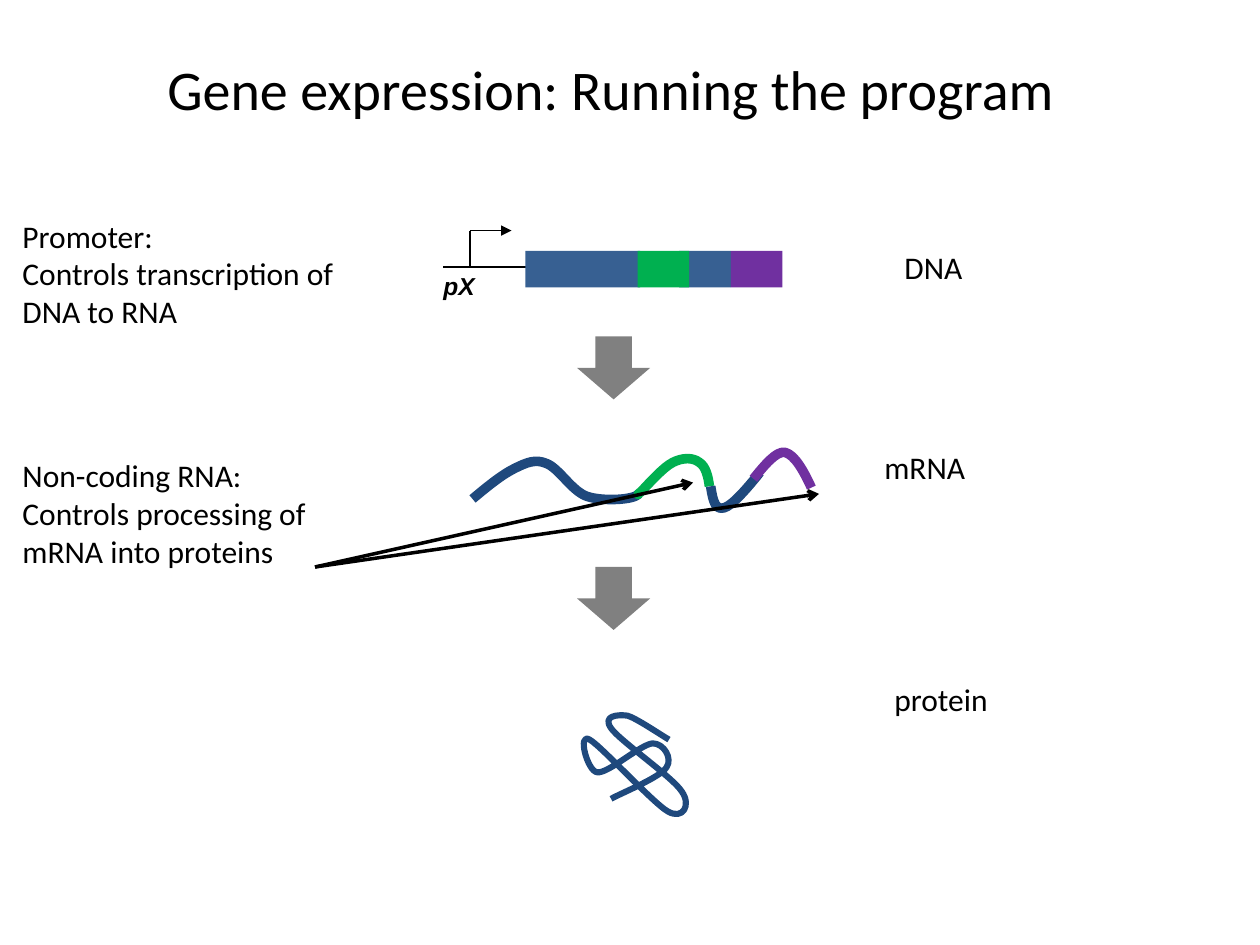
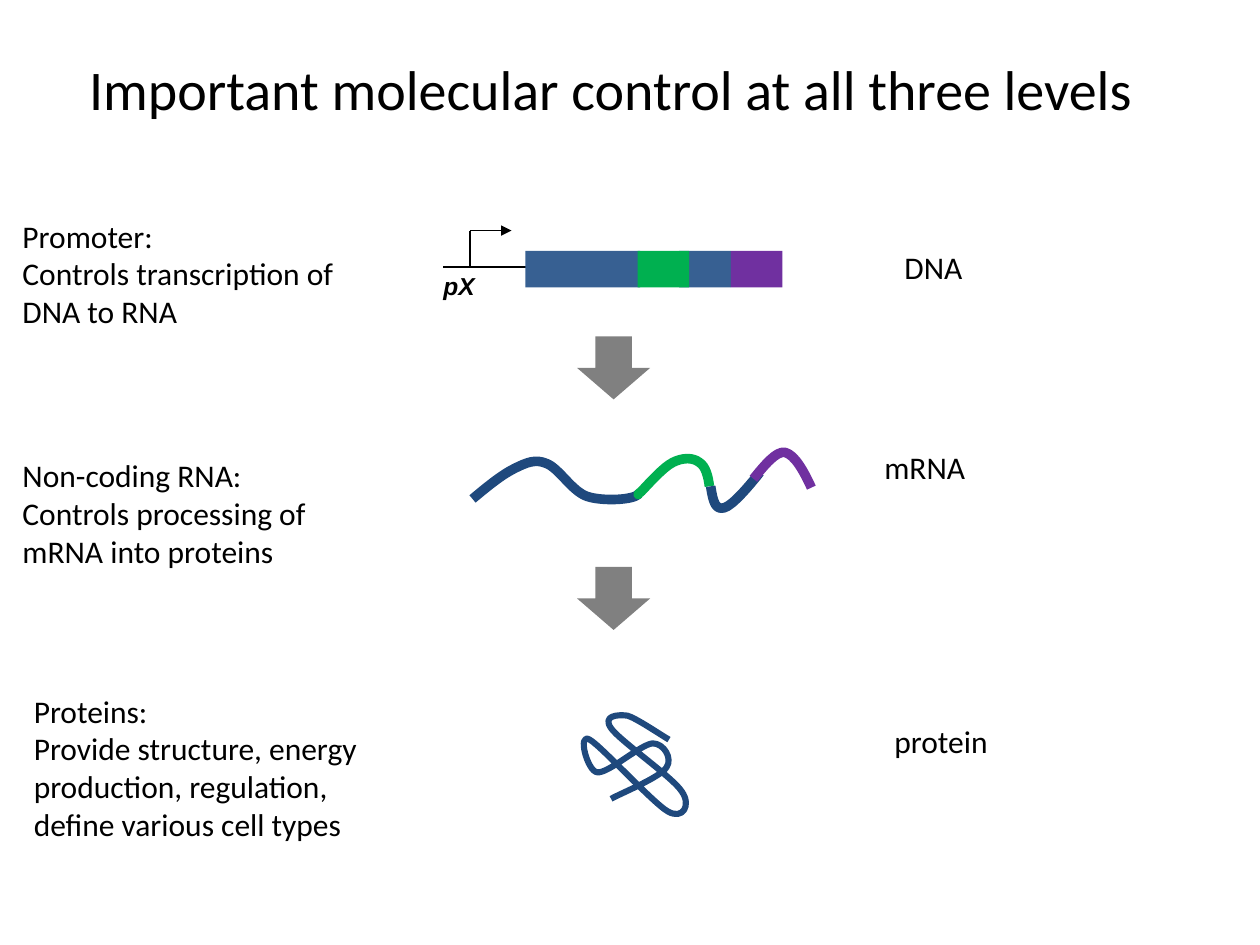
"""Builds two slides on the steps of gene expression: DNA, mRNA and protein."""
from typing import NamedTuple

from lxml import etree
from pptx import Presentation
from pptx import slide as s
from pptx import util as u
from pptx.dml import color
from pptx.enum import shapes, text
from pptx.oxml import ns

PX = u.Inches(1) // 100
COLORS = {
    "ink": "000000",
    "arrow": "808080",
    "exon": "376092",
    "strand": "1F497D",
    "green": "00B050",
    "purple": "7030A0",
}
BODY = {"name": "Calibri", "size": u.Pt(18)}
TITLE = {"name": "Calibri", "size": u.Pt(32)}
PROMOTER = {"name": "Arial", "size": u.Pt(14), "bold": True, "italic": True}


class Label(NamedTuple):
    """A text box with one paragraph for each line."""

    left: int
    top: int
    width: int
    height: int
    lines: tuple[str, ...]
    font: dict = BODY
    align: text.PP_ALIGN = text.PP_ALIGN.LEFT


class Block(NamedTuple):
    """A filled preset shape without outline."""

    left: int
    top: int
    width: int
    height: int
    fill: str
    kind: shapes.MSO_SHAPE = shapes.MSO_SHAPE.RECTANGLE


class Line(NamedTuple):
    """A straight line with an optional arrowhead at its end."""

    start: tuple[int, int]
    end: tuple[int, int]
    weight: float = 0.75
    head: str = ""


class Curve(NamedTuple):
    """A stroke of joined cubic segments, each two controls and an end."""

    color: str
    weight: float
    start: tuple[int, int]
    segments: tuple[tuple[int, ...], ...]


DNA_LINES = (
    Line((373, 183), (406, 183), head="triangle"),
    Line((373, 183), (373, 212)),
    Line((533, 212), (352, 212)),
    Line((510, 212), (490, 212)),
)
DNA_BLOCKS = tuple(
    Block(left, 199, width, 29, fill)
    for left, width, fill in (
        (417, 91, "exon"),
        (539, 41, "exon"),
        (506, 41, "green"),
        (580, 41, "purple"),
    )
)
STEP_ARROWS = tuple(
    Block(458, top, 58, 50, "arrow", shapes.MSO_SHAPE.DOWN_ARROW)
    for top in (267, 450)
)
PROTEIN = Curve("strand", 3.5, (531, 587), (
    (524, 583, 505, 570, 498, 568),
    (490, 567, 478, 568, 485, 578),
    (492, 588, 534, 617, 541, 628),
    (549, 639, 542, 651, 530, 644),
    (518, 637, 477, 592, 468, 587),
    (458, 581, 466, 612, 474, 613),
    (483, 614, 508, 591, 518, 590),
    (527, 590, 534, 602, 529, 609),
    (524, 617, 494, 629, 485, 634),
))
MRNA = (
    Curve("strand", 5.5, (375, 396), (
        (387, 386, 398, 377, 408, 372),
        (418, 367, 425, 364, 434, 368),
        (444, 372, 454, 390, 466, 394),
        (478, 398, 503, 397, 507, 392),
    )),
    Curve("green", 5.5, (507, 392), (
        (508, 392, 504, 394, 509, 390),
        (513, 386, 526, 371, 534, 367),
        (542, 363, 550, 363, 555, 367),
        (560, 370, 562, 378, 563, 386),
    )),
    Curve("strand", 5.5, (564, 386), (
        (566, 399, 568, 405, 575, 403),
        (581, 401, 592, 389, 603, 375),
    )),
    Curve("purple", 5.5, (598, 380), (
        (607, 369, 616, 358, 623, 359),
        (631, 361, 638, 374, 644, 387),
    )),
)
SHARED_LABELS = (
    Label(708, 192, 142, 40, ("DNA",)),
    Label(692, 351, 142, 40, ("mRNA",)),
    Label(342, 210, 139, 34, ("pX",), PROMOTER),
    Label(8, 167, 292, 101,
          ("Promoter:", "Controls transcription of DNA to RNA")),
    Label(8, 357, 292, 101,
          ("Non-coding RNA:", "Controls processing of mRNA into proteins")),
)
PROTEIN_ROLE = Label(17, 544, 317, 131, (
    "Proteins:",
    "Provide structure, energy production, regulation, define various cell types",
))
RNA_TARGETS = tuple(
    Line((250, 450), end, 2, "arrow") for end in ((650, 392), (550, 383))
)


def rgb(name: str) -> color.RGBColor:
    """Return the named colour."""
    return color.RGBColor.from_string(COLORS[name])


def add_label(slide: s.Slide, label: Label) -> None:
    """Write a label on the slide."""
    frame = slide.shapes.add_textbox(*(PX * side for side in label[:4])).text_frame
    frame.word_wrap = True
    frame.auto_size = text.MSO_AUTO_SIZE.SHAPE_TO_FIT_TEXT
    frame.text = "\n".join(label.lines)
    for paragraph in frame.paragraphs:
        paragraph.alignment = label.align
        for run in paragraph.runs:
            for attribute, value in label.font.items():
                setattr(run.font, attribute, value)
            run.font.color.rgb = rgb("ink")


def add_block(slide: s.Slide, block: Block) -> None:
    """Draw a filled block."""
    shape = slide.shapes.add_shape(block.kind, *(PX * side for side in block[:4]))
    shape.shadow.inherit = False
    shape.fill.solid()
    shape.fill.fore_color.rgb = rgb(block.fill)
    shape.line.fill.background()


def add_line(slide: s.Slide, line: Line) -> None:
    """Draw a straight line and its arrowhead."""
    ends = (PX * value for value in line.start + line.end)
    connector = slide.shapes.add_connector(shapes.MSO_CONNECTOR.STRAIGHT, *ends)
    connector.line.color.rgb = rgb("ink")
    connector.line.width = u.Pt(line.weight)
    properties = connector.line._get_or_add_ln()
    if line.head:
        etree.SubElement(properties, ns.qn("a:tailEnd"), type=line.head)
    etree.SubElement(properties.getparent(), ns.qn("a:effectLst"))


def add_curve(slide: s.Slide, curve: Curve) -> None:
    """Draw an open curve, turning each three vertices into one cubic segment."""
    builder = slide.shapes.build_freeform(*curve.start, scale=PX)
    builder.add_line_segments(
        [segment[i:i + 2] for segment in curve.segments for i in (0, 2, 4)],
        close=False,
    )
    shape = builder.convert_to_shape()
    vertices = list(shape._element.iter(ns.qn("a:lnTo")))
    outline = vertices[0].getparent()
    for first in range(0, len(vertices), 3):
        cubic = etree.SubElement(outline, ns.qn("a:cubicBezTo"))
        for vertex in vertices[first:first + 3]:
            cubic.append(vertex[0])
            outline.remove(vertex)
    shape.shadow.inherit = False
    shape.fill.background()
    shape.line.color.rgb = rgb(curve.color)
    shape.line.width = u.Pt(curve.weight)


def add_expression_slide(
    presentation, title: str, protein_top: int,
    labels: tuple[Label, ...] = (), pointers: tuple[Line, ...] = (),
) -> None:
    """Add a slide with the shared diagram and its own labels and pointers."""
    slide = presentation.slides.add_slide(presentation.slide_layouts[6])
    heading = Label(60, 38, 850, 64, (title,), TITLE, text.PP_ALIGN.CENTER)
    protein = Label(700, protein_top, 142, 40, ("protein",))
    for draw, items in (
        (add_label, (heading, *SHARED_LABELS, protein, *labels)),
        (add_line, DNA_LINES),
        (add_block, DNA_BLOCKS + STEP_ARROWS),
        (add_curve, (PROTEIN, *MRNA)),
        (add_line, pointers),
    ):
        for item in items:
            draw(slide, item)


def main() -> None:
    """Build and save the presentation."""
    presentation = Presentation()
    presentation.slide_width = 1000 * PX
    presentation.slide_height = 750 * PX
    add_expression_slide(presentation, "Gene expression: Running the program",
                         535, pointers=RNA_TARGETS)
    add_expression_slide(presentation, "Important molecular control at all three levels",
                         568, labels=(PROTEIN_ROLE,))
    presentation.save("out.pptx")


if __name__ == "__main__":
    main()
